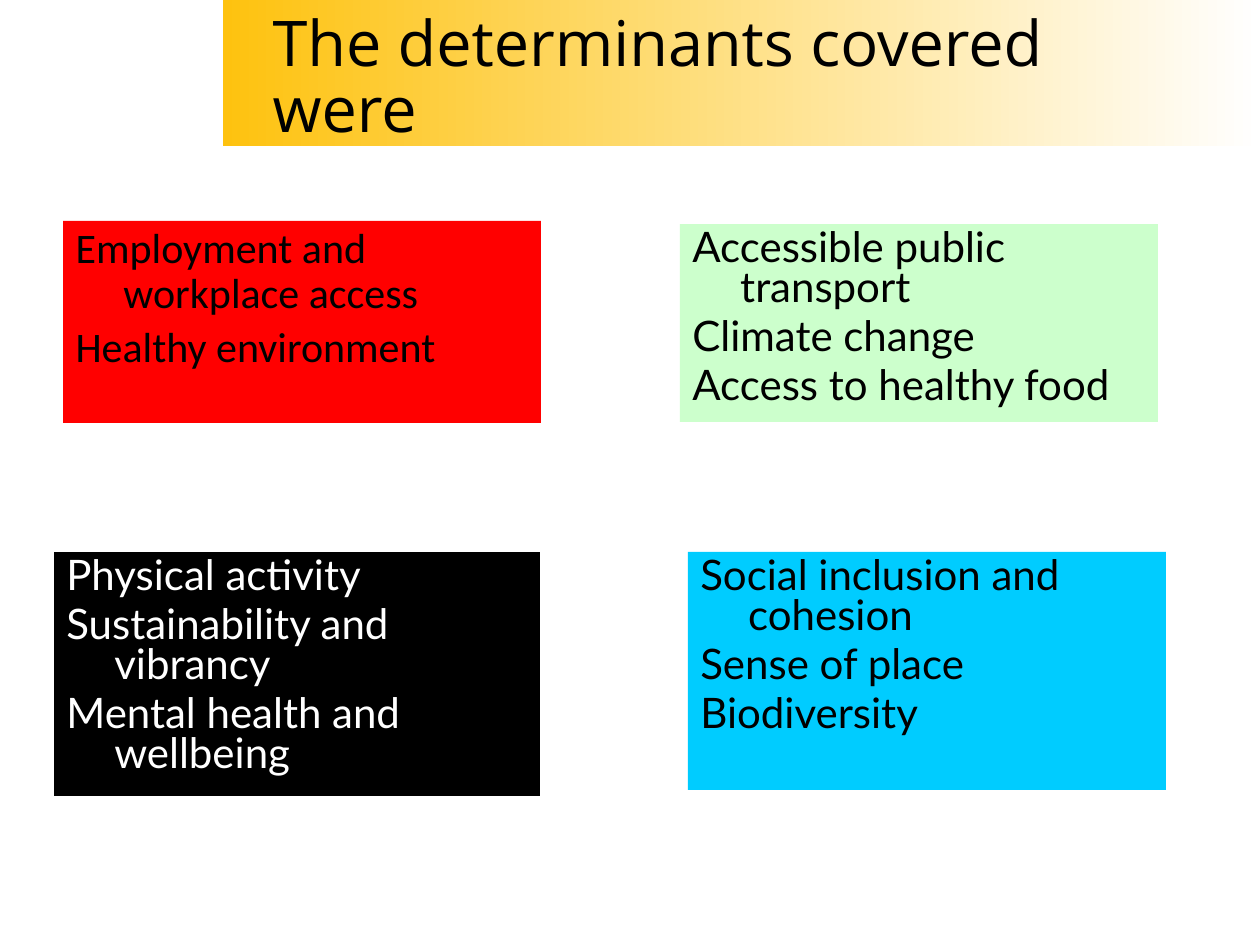
from pptx import Presentation
from pptx import util as u
from pptx.dml.color import RGBColor
from pptx.enum import shapes, text
from pptx.oxml.ns import qn

PX = u.Inches(1) / 126

BLACK = RGBColor(0x00, 0x00, 0x00)
WHITE = RGBColor(0xFF, 0xFF, 0xFF)
GOLD = RGBColor(0xFE, 0xC2, 0x0F)
RED = RGBColor(0xFF, 0x00, 0x00)
MINT = RGBColor(0xCC, 0xFF, 0xCC)
SKY = RGBColor(0x00, 0xCC, 0xFF)


def px(*lengths):
    return [u.Emu(round(length * PX)) for length in lengths]


class DeterminantsSlide:
    title_font, title_size = "Open Sans", u.Pt(36)
    list_size, list_gap = u.Pt(24), u.Pt(4.8)
    hanging = u.Inches(0.38)

    def __init__(self, prs):
        self.slide = prs.slides.add_slide(prs.slide_layouts[1])

    def place(self, shape, box):
        shape.left, shape.top, shape.width, shape.height = px(*box)

    def rectangle(self, box):
        rect = self.slide.shapes.add_shape(shapes.MSO_SHAPE.RECTANGLE, *px(*box))
        rect.shadow.inherit = False
        rect.line.fill.background()
        return rect

    def band(self, box, start, end):
        band = self.rectangle(box)
        band.fill.gradient()
        band.fill.gradient_angle = 0
        for stop, color in zip(band.fill.gradient_stops, (start, end)):
            stop.color.rgb = color
        # Behind the placeholders
        self.slide.shapes._spTree.insert(2, band._element)

    def style(self, paragraph, font, size, color, spacing):
        paragraph.alignment = text.PP_ALIGN.LEFT
        paragraph.line_spacing = spacing
        paragraph.font.name = font
        paragraph.font.size = size
        paragraph.font.color.rgb = color

    def title(self, wording, box):
        title = self.slide.shapes.title
        self.place(title, box)
        frame = title.text_frame
        frame.text = wording
        frame.word_wrap = True
        frame.auto_size = text.MSO_AUTO_SIZE.NONE
        frame.vertical_anchor = text.MSO_ANCHOR.MIDDLE
        frame.margin_top, = px(18)
        self.style(frame.paragraphs[0], self.title_font, self.title_size, BLACK, 0.87)

    def fill_list(self, shape, items, fill, color, font, spacing):
        shape.fill.solid()
        shape.fill.fore_color.rgb = fill
        frame = shape.text_frame
        frame.text = "\n".join(items)
        frame.word_wrap = True
        frame.auto_size = text.MSO_AUTO_SIZE.NONE
        frame.vertical_anchor = text.MSO_ANCHOR.TOP
        for index, paragraph in enumerate(frame.paragraphs):
            props = paragraph._p.get_or_add_pPr()
            props.set("marL", str(self.hanging))
            props.set("indent", str(-self.hanging))
            props.append(props.makeelement(qn("a:buNone"), {}))
            paragraph.space_before = self.list_gap if index else u.Pt(0)
            self.style(paragraph, font, self.list_size, color, spacing)

    def body_list(self, items, box, fill, color):
        body = self.slide.placeholders[1]
        self.place(body, box)
        self.fill_list(body, items, fill, color, "Calibri", 0.9)

    def box_list(self, items, box, fill, color):
        self.fill_list(self.rectangle(box), items, fill, color, "Lato", 0.8)


def main():
    prs = Presentation()
    prs.slide_width, prs.slide_height = px(1260, 945)
    page = DeterminantsSlide(prs)

    # Heading
    page.band((223, 0, 1037, 146), GOLD, WHITE)
    page.title("The determinants covered were", (260, 8, 912, 132))

    # Four groups of determinants
    page.body_list(["Employment and workplace access", "Healthy environment"],
                   (63, 221, 478, 202), RED, BLACK)
    groups = [
        (["Accessible public transport", "Climate change", "Access to healthy food"],
         (680, 224, 478, 198), MINT, BLACK),
        (["Physical activity", "Sustainability and vibrancy", "Mental health and wellbeing"],
         (54, 552, 486, 244), BLACK, WHITE),
        (["Social inclusion and cohesion", "Sense of place", "Biodiversity"],
         (688, 552, 478, 238), SKY, BLACK),
    ]
    for group in groups:
        page.box_list(*group)

    prs.save("out.pptx")


if __name__ == "__main__":
    main()
